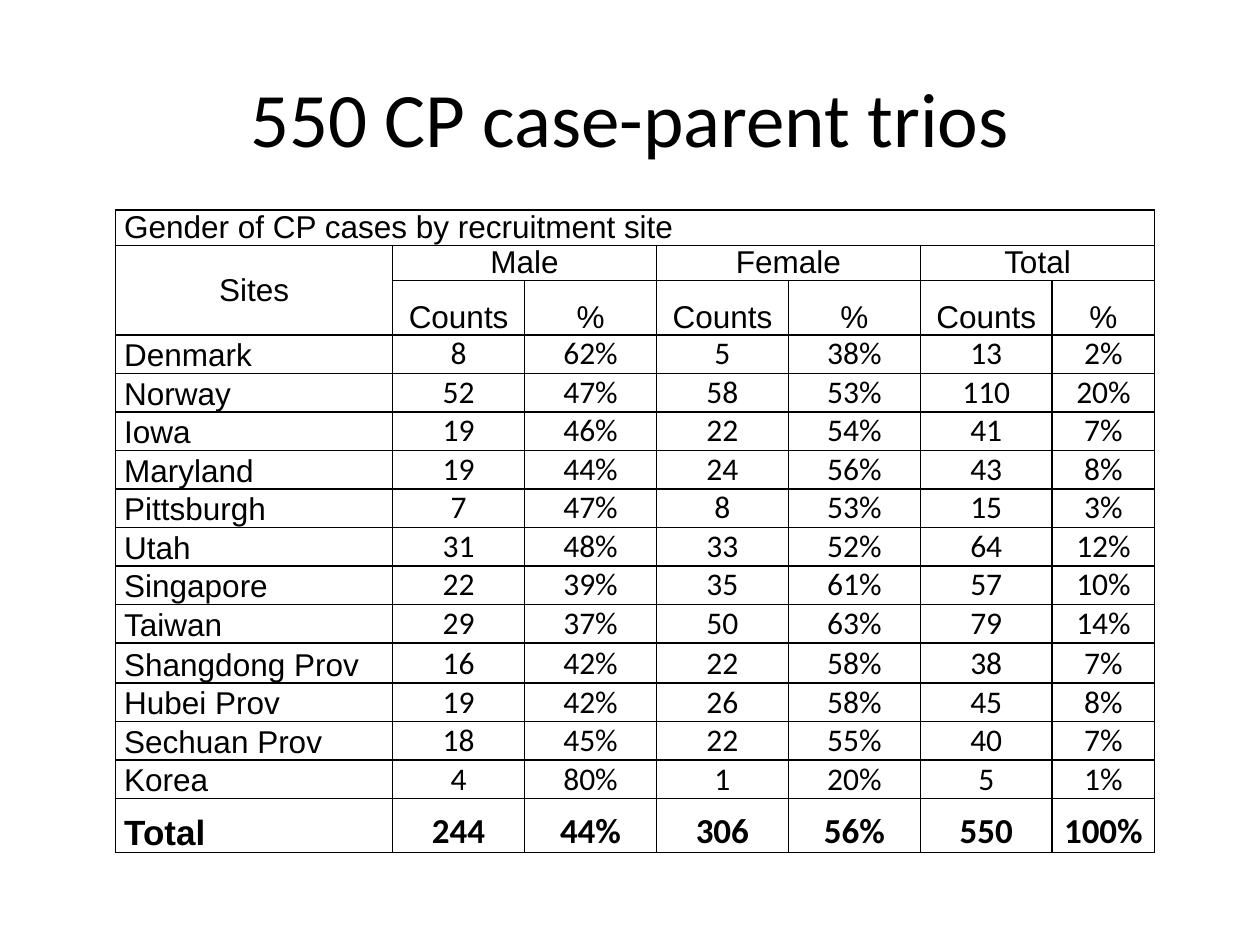
import pptx
import pptx.dml.color
import pptx.enum.text
import pptx.oxml
import pptx.oxml.ns
import pptx.util

Pt = pptx.util.Pt
ALIGN = pptx.enum.text.PP_ALIGN
ANCHOR = pptx.enum.text.MSO_ANCHOR

TITLE = "550 CP case-parent trios"
HEADER = [
    ["Gender of CP cases by recruitment site"] + [""] * 6,
    ["Sites", "Male", "", "Female", "", "Total", ""],
    [""] + ["Counts", "%"] * 3,
]
SITES = [
    ["Denmark", "8", "62%", "5", "38%", "13", "2%"],
    ["Norway", "52", "47%", "58", "53%", "110", "20%"],
    ["Iowa", "19", "46%", "22", "54%", "41", "7%"],
    ["Maryland", "19", "44%", "24", "56%", "43", "8%"],
    ["Pittsburgh", "7", "47%", "8", "53%", "15", "3%"],
    ["Utah", "31", "48%", "33", "52%", "64", "12%"],
    ["Singapore", "22", "39%", "35", "61%", "57", "10%"],
    ["Taiwan", "29", "37%", "50", "63%", "79", "14%"],
    ["Shangdong Prov", "16", "42%", "22", "58%", "38", "7%"],
    ["Hubei Prov", "19", "42%", "26", "58%", "45", "8%"],
    ["Sechuan Prov", "18", "45%", "22", "55%", "40", "7%"],
    ["Korea", "4", "80%", "1", "20%", "5", "1%"],
]
TOTAL = ["Total", "244", "44%", "306", "56%", "550", "100%"]
ROWS = HEADER + SITES + [TOTAL]

# First row, first column, last row, last column
MERGES = [(0, 0, 0, 6), (1, 0, 2, 0), (1, 1, 1, 2), (1, 3, 1, 4), (1, 5, 1, 6)]
COLUMN_WIDTHS = [158.4] + [75.4] * 5 + [58.6]
ROW_HEIGHT = 18
TALL_ROWS = {"Shangdong Prov": 23, "Total": 31, "": 31}
TABLE_LEFT, TABLE_TOP, TABLE_HEIGHT = 66, 120, 366
BLACK = "000000"


def color(value):
    return pptx.dml.color.RGBColor.from_string(value)


def add_span(para, text, font, size, bold=False):
    span = para.add_run()
    span.text = text
    span.font.name = font
    span.font.size = Pt(size)
    span.font.bold = bold
    span.font.color.rgb = color(BLACK)


def add_borders(cell):
    properties = cell._tc.get_or_add_tcPr()
    for side in ("lnL", "lnR", "lnT", "lnB"):
        properties.append(pptx.oxml.parse_xml(
            f'<a:{side} {pptx.oxml.ns.nsdecls("a")} w="{Pt(1)}"><a:solidFill>'
            f'<a:srgbClr val="{BLACK}"/></a:solidFill></a:{side}>'))


def fill_cell(cell, text, row, column):
    add_borders(cell)
    cell.fill.background()
    cell.margin_left = cell.margin_right = Pt(5)
    cell.margin_top = cell.margin_bottom = 0
    cell.vertical_anchor = ANCHOR.MIDDLE if text == "Sites" else ANCHOR.BOTTOM
    if not text:
        return
    is_header = row < len(HEADER)
    is_total = row == len(ROWS) - 1
    is_left = column == 0 and text != "Sites"
    para = cell.text_frame.paragraphs[0]
    para.alignment = ALIGN.LEFT if is_left else ALIGN.CENTER
    font = "Arial" if is_header or column == 0 else "Calibri"
    add_span(para, text, font, 20 if is_total else 18, is_total)


def add_title(page):
    box = page.shapes.title
    box.left, box.top, box.width, box.height = Pt(36), Pt(21.6), Pt(648), Pt(90)
    box.text_frame.vertical_anchor = ANCHOR.MIDDLE
    para = box.text_frame.paragraphs[0]
    para.alignment = ALIGN.CENTER
    add_span(para, TITLE, "Calibri", 44)


def add_site_table(page):
    frame = page.shapes.add_table(
        len(ROWS), len(COLUMN_WIDTHS), Pt(TABLE_LEFT), Pt(TABLE_TOP),
        Pt(sum(COLUMN_WIDTHS)), Pt(TABLE_HEIGHT))
    table = frame.table
    table.first_row = table.horz_banding = False
    for column, width in zip(table.columns, COLUMN_WIDTHS):
        column.width = Pt(width)
    for r, texts in enumerate(ROWS):
        table.rows[r].height = Pt(TALL_ROWS.get(texts[0], ROW_HEIGHT))
        for c, text in enumerate(texts):
            fill_cell(table.cell(r, c), text, r, c)
    for top, left, bottom, right in MERGES:
        table.cell(top, left).merge(table.cell(bottom, right))
    frame.height = Pt(TABLE_HEIGHT)


def main():
    deck = pptx.Presentation()
    deck.slide_width, deck.slide_height = Pt(720), Pt(540)
    page = deck.slides.add_slide(deck.slide_layouts[5])
    add_title(page)
    add_site_table(page)
    deck.save("out.pptx")


if __name__ == "__main__":
    main()
